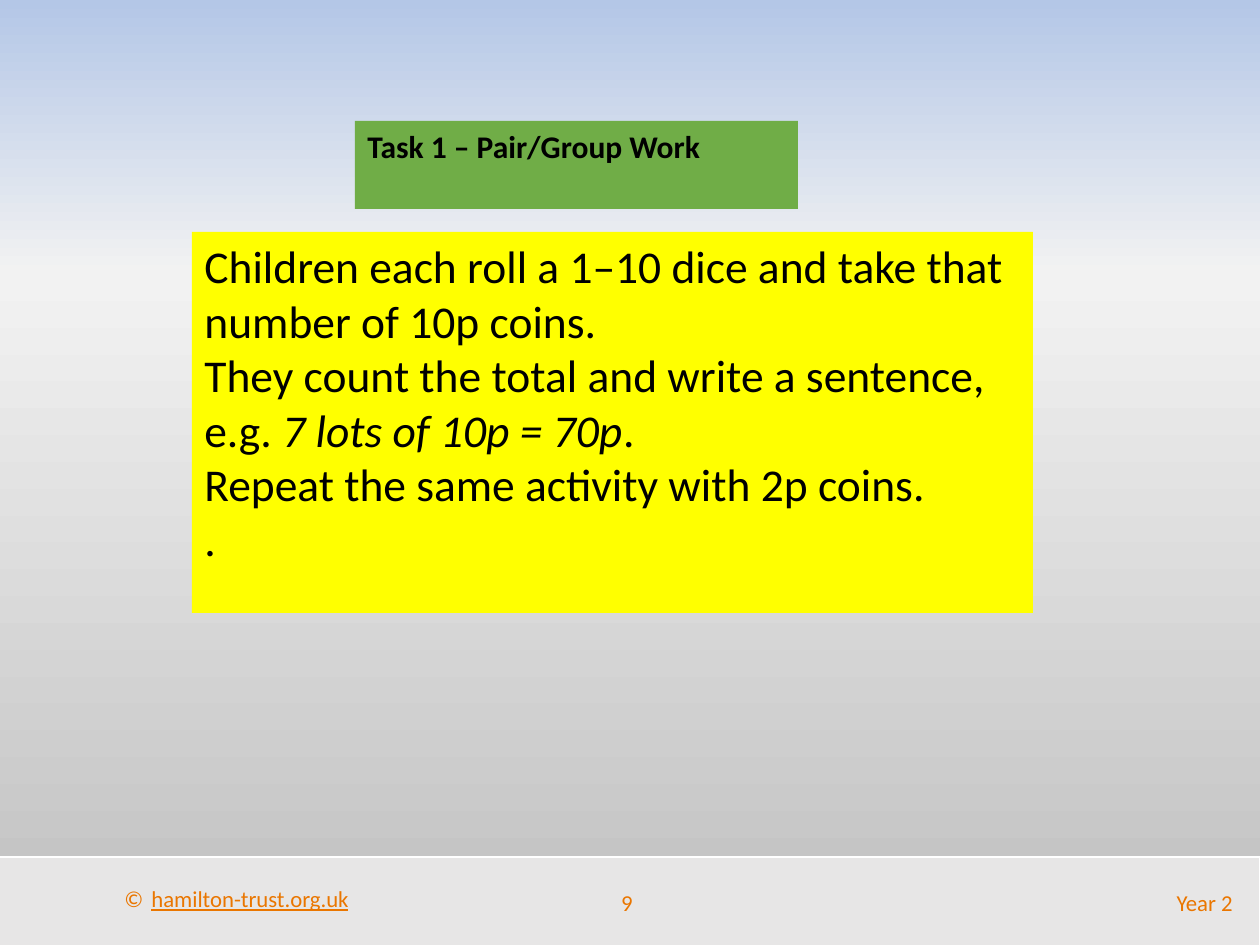
from copy import deepcopy

from lxml import etree
from pptx import Presentation
from pptx.dml.color import RGBColor
from pptx.enum.shapes import MSO_SHAPE
from pptx.enum.text import MSO_ANCHOR, PP_ALIGN
from pptx.oxml.ns import qn
from pptx.util import Pt

PX = 914400 // 126
RECT = MSO_SHAPE.RECTANGLE
TOP, MIDDLE = MSO_ANCHOR.TOP, MSO_ANCHOR.MIDDLE
LEFT, CENTER, RIGHT = PP_ALIGN.LEFT, PP_ALIGN.CENTER, PP_ALIGN.RIGHT
ORANGE, BLACK = "EA7600", "000000"


def rgb(value):
    return RGBColor.from_string(value)


def write(sp, paragraphs, size, color, align=LEFT, anchor=TOP):
    """Fill a shape with paragraphs, each a list of (text, style) runs."""
    tf = sp.text_frame
    tf.word_wrap = True
    tf.vertical_anchor = anchor
    for i, runs in enumerate(paragraphs):
        p = tf.add_paragraph() if i else tf.paragraphs[0]
        p.alignment = align
        for text, style in runs:
            r = p.add_run()
            r.text = text
            r.font.name = "Calibri"
            r.font.size = Pt(size)
            r.font.color.rgb = rgb(color)
            if style:
                setattr(r.font, style, True)


prs = Presentation()
prs.slide_width = 1260 * PX
prs.slide_height = 945 * PX
s = prs.slides.add_slide(prs.slide_layouts[6])

# Background: three-stop vertical gradient
fill = s.background.fill
fill.gradient()
fill.gradient_angle = 270
last = fill.gradient_stops[1]._gs
last.addprevious(deepcopy(last))
stops = [(0, "B4C7E7"), (0.29, "F2F2F2"), (1, "BFBFBF")]
for stop, (position, color) in zip(fill.gradient_stops, stops):
    stop.position = position
    stop.color.rgb = rgb(color)

# Footer band, task heading and instructions
task = [[("Task 1 – Pair/Group Work", "bold")]]
instructions = [
    [("Children each roll a 1–10 dice and take that number of 10p coins.", None)],
    [("They count the total and write a sentence, e.g. ", None),
     ("7 lots of 10p = 70p", "italic"), (".", None)],
    [("Repeat the same activity with 2p coins.", None)],
    [(".", None)],
]
for box, color, line, paragraphs, size in [
    ((-8, 857, 1268, 91), "E7E6E6", "FFFFFF", [], 13),
    ((355, 121, 443, 88), "70AD47", None, task, 18),
    ((192, 232, 841, 381), "FFFF00", None, instructions, 26),
]:
    sp = s.shapes.add_shape(RECT, *[v * PX for v in box])
    sp.shadow.inherit = False
    sp.fill.solid()
    sp.fill.fore_color.rgb = rgb(color)
    if line:
        sp.line.color.rgb = rgb(line)
        sp.line.width = Pt(1)
    else:
        sp.line.fill.background()
    write(sp, paragraphs, size, BLACK)

# Footer texts
for box, runs, align, anchor in [
    ((112, 879, 312, 40), [("©\t", None), ("hamilton-trust.org.uk", "underline")], LEFT, TOP),
    ((577, 877, 100, 50), [("9", None)], CENTER, MIDDLE),
    ((819, 877, 426, 50), [("Year 2", None)], RIGHT, MIDDLE),
]:
    sp = s.shapes.add_textbox(*[v * PX for v in box])
    if align == LEFT:
        # Tab stop between the copyright sign and the address
        pPr = sp.text_frame.paragraphs[0]._p.get_or_add_pPr()
        tabs = etree.SubElement(pPr, qn("a:tabLst"))
        etree.SubElement(tabs, qn("a:tab"), pos=str(27 * PX), algn="l")
    write(sp, [runs], 13, ORANGE, align, anchor)

prs.save("out.pptx")
